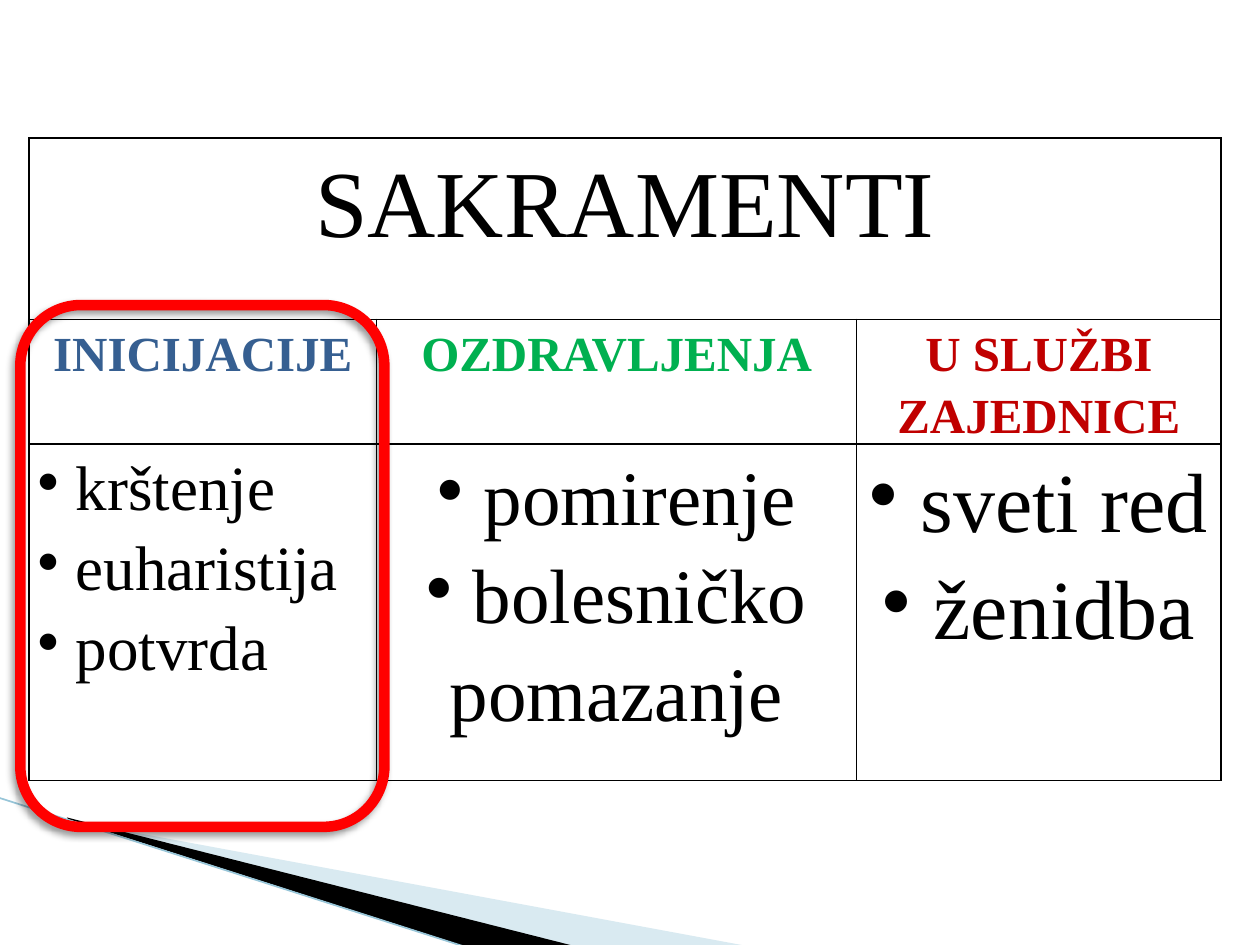
import pptx
import pptx.dml.color
import pptx.enum.shapes
import pptx.enum.text
import pptx.oxml
import pptx.oxml.ns
import pptx.util
from pptx.util import Cm, Pt

FONT = "Times New Roman"
ALIGN = pptx.enum.text.PP_ALIGN
NS = pptx.oxml.ns.nsdecls("a")

COLUMN_WIDTHS = (7.01, 9.68, 7.34)
ROW_HEIGHTS = (3.66, 2.26, 6.78)
GROUPS = (
    ("INICIJACIJE", "365F91", 36, ALIGN.LEFT,
     ("krštenje", "euharistija", "potvrda")),
    ("OZDRAVLJENJA", "00B050", 44, ALIGN.CENTER,
     ("pomirenje", "bolesničko pomazanje")),
    ("U SLUŽBI ZAJEDNICE", "C00000", 48, ALIGN.CENTER,
     ("sveti red", "ženidba")),
)


def rgb(color):
    return pptx.dml.color.RGBColor.from_string(color)


def add_xml(parent, xml):
    element = pptx.oxml.parse_xml(xml)
    parent.append(element)
    return element


def add_wedge(s, points, color, opacity=100):
    corners = [(Cm(x), Cm(y)) for x, y in points]
    builder = s.shapes.build_freeform(*corners[0])
    builder.add_line_segments(corners[1:], close=True)
    sp = builder.convert_to_shape()
    sp.shadow.inherit = False
    sp.fill.solid()
    sp.fill.fore_color.rgb = rgb(color)
    sp.line.fill.background()
    if opacity < 100:
        clr = sp.fill._xPr.find(".//" + pptx.oxml.ns.qn("a:srgbClr"))
        add_xml(clr, f'<a:alpha {NS} val="{opacity * 1000}"/>')


def add_line(s, x1, y1, x2, y2, color, width):
    line = s.shapes.add_connector(
        pptx.enum.shapes.MSO_CONNECTOR.STRAIGHT, Cm(x1), Cm(y1), Cm(x2), Cm(y2))
    line.line.color.rgb = rgb(color)
    line.line.width = Pt(width)
    add_xml(line._element.spPr, f"<a:effectLst {NS}/>")


def add_frame(s, x, y, w, h, color, width):
    sp = s.shapes.add_shape(
        pptx.enum.shapes.MSO_SHAPE.ROUNDED_RECTANGLE, Cm(x), Cm(y), Cm(w), Cm(h))
    sp.fill.background()
    sp.line.color.rgb = rgb(color)
    sp.line.width = Pt(width)
    add_xml(sp._element.spPr, f"""
        <a:effectLst {NS}>
          <a:outerShdw blurRad="{Pt(4)}" dist="{Pt(3)}" dir="{135 * 60000}" rotWithShape="0">
            <a:srgbClr val="000000"><a:alpha val="40000"/></a:srgbClr>
          </a:outerShdw>
        </a:effectLst>""".strip())


def style_cell(cell):
    cell.margin_left = cell.margin_right = Cm(0.18)
    cell.margin_top = cell.margin_bottom = 0
    for side in "LRTB":
        add_xml(cell._tc.get_or_add_tcPr(), f'<a:ln{side} {NS} w="{Pt(1)}"><a:solidFill>'
                f'<a:srgbClr val="000000"/></a:solidFill></a:ln{side}>')
    cell.fill.background()


def write_cell(cell, texts, size, color="000000", align=ALIGN.CENTER,
               bold=False, bullet=False):
    tf = cell.text_frame
    for i, text in enumerate(texts):
        p = tf.add_paragraph() if i else tf.paragraphs[0]
        p.alignment = align
        p.line_spacing = 1.15
        if bullet:
            pPr = p._p.get_or_add_pPr()
            pPr.set("marL", "0")
            pPr.set("indent", "0")
            add_xml(pPr, f'<a:buChar {NS} char="•"/>')
        r = p.add_run()
        r.text = f" {text}" if bullet else text
        r.font.name = FONT
        r.font.size = Pt(size)
        r.font.bold = bold
        r.font.color.rgb = rgb(color)


def add_sacraments_table(s):
    table = s.shapes.add_table(
        len(ROW_HEIGHTS), len(COLUMN_WIDTHS), Cm(0.58), Cm(2.78),
        Cm(sum(COLUMN_WIDTHS)), Cm(sum(ROW_HEIGHTS))).table
    table.first_row = table.horz_banding = False
    for column, width in zip(table.columns, COLUMN_WIDTHS):
        column.width = Cm(width)
    for row, height in zip(table.rows, ROW_HEIGHTS):
        row.height = Cm(height)
    for cell in table.iter_cells():
        style_cell(cell)
    table.cell(0, 0).merge(table.cell(0, len(COLUMN_WIDTHS) - 1))
    write_cell(table.cell(0, 0), ["SAKRAMENTI"], 54)
    for col, (heading, color, size, align, items) in enumerate(GROUPS):
        write_cell(table.cell(1, col), [heading], 28, color, bold=True)
        write_cell(table.cell(2, col), items, size, align=align, bullet=True)


def main():
    prs = pptx.Presentation()
    prs.slide_width, prs.slide_height = Cm(25.4), Cm(19.05)
    s = prs.slides.add_slide(prs.slide_layouts[6])
    add_wedge(s, [(1.4, 16.54), (15.11, 19.08), (11.58, 19.08), (1.4, 16.51)],
              "A0CBDC", 40)
    add_wedge(s, [(1.35, 16.48), (11.61, 19.08), (9.45, 19.1), (1.37, 16.51)],
              "000000")
    add_line(s, -0.03, 16.08, 9.42, 19.1, "97C5D8", 0.95)
    add_sacraments_table(s)
    add_frame(s, 0.41, 6.15, 7.34, 10.52, "FF0000", 6)
    prs.save("out.pptx")


if __name__ == "__main__":
    main()
